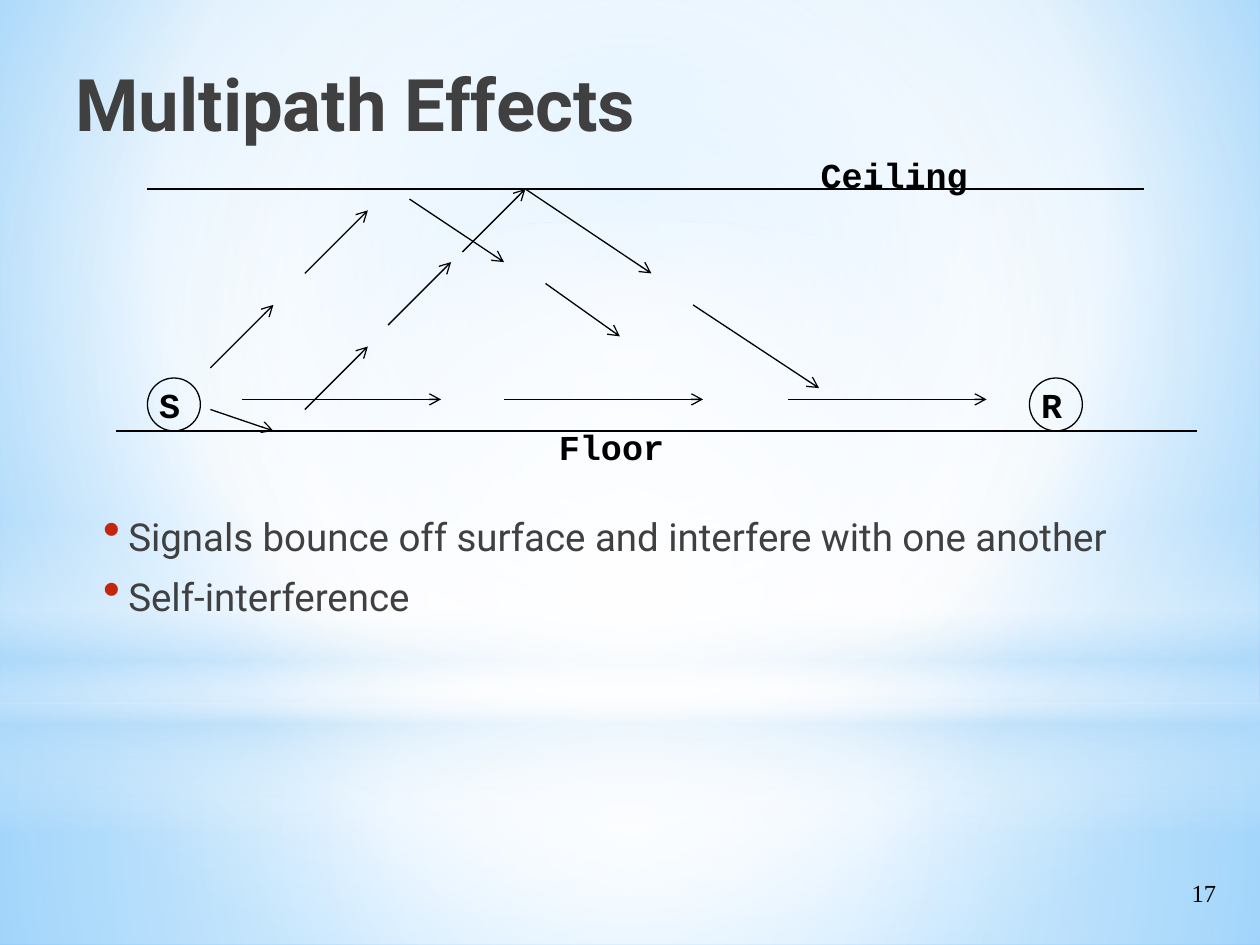
from lxml.etree import SubElement
from pptx import Presentation
from pptx.dml.color import RGBColor
from pptx.enum.shapes import MSO_CONNECTOR, MSO_SHAPE
from pptx.enum.text import MSO_ANCHOR, PP_ALIGN
from pptx.oxml import parse_xml
from pptx.oxml.ns import nsdecls, qn
from pptx.util import Inches, Pt

BLACK = RGBColor(0x00, 0x00, 0x00)
GREY = RGBColor(0x40, 0x40, 0x40)
RED = RGBColor(0xC3, 0x26, 0x0C)
WHITE = RGBColor(0xFF, 0xFF, 0xFF)
PALE = RGBColor(0xB4, 0xDC, 0xFA)
SKY = RGBColor(0x9E, 0xD5, 0xFF)
BLUE = RGBColor(0x5B, 0xB9, 0xFF)

CENTRE = (50, 50, 50, 50)
CEILING_Y, FLOOR_Y, DIRECT_Y = 1.5, 3.42, 3.17

# Box, shape, (position, colour, opacity) stops, focus (None for a vertical blend)
GLOWS = [
    ((0, 5.58, 10, 1.92), MSO_SHAPE.RECTANGLE,
     [(0, WHITE, 91), (37, WHITE, 76), (100, PALE, 79)], CENTRE),
    ((0, 0, 10, 5.58), MSO_SHAPE.RECTANGLE,
     [(0, WHITE, 89), (48, WHITE, 62), (100, PALE, 79)], CENTRE),
    ((0, 4.12, 10, 2.5), MSO_SHAPE.RECTANGLE,
     [(0, WHITE, 0), (29, WHITE, 30), (45, PALE, 40),
      (55, WHITE, 26), (65, PALE, 60), (100, WHITE, 0)], None),
    ((0, 1.75, 10, 5.58), MSO_SHAPE.OVAL,
     [(0, WHITE, 100), (56, WHITE, 0)], CENTRE),
]

# Arrows of each signal path, as (x1, y1, x2, y2)
DIRECT = [(x, DIRECT_Y, x + 1.58, DIRECT_Y) for x in (1.92, 4, 6.25)]
OFF_CEILING = [(1.67, 2.92, 2.17, 2.42), (2.42, 2.17, 2.92, 1.67),
               (3.25, 1.58, 4, 2.08), (4.33, 2.25, 4.92, 2.67)]
OFF_FLOOR = [(1.67, 3.25, 2.17, FLOOR_Y), (2.42, 3.25, 2.92, 2.75),
             (3.08, 2.58, 3.58, 2.08), (3.67, 2, 4.17, CEILING_Y),
             (4.17, CEILING_Y, 5.17, 2.17), (5.5, 2.42, 6.5, 3.08)]


def inches(values):
    return [Inches(value) for value in values]


def set_gradient(fill, owner, stops, focus):
    """Give the fill of owner a blend towards focus, or downwards."""
    fill.gradient()
    stop_xml = "".join(
        f'<a:gs pos="{position * 1000}"><a:srgbClr val="{colour}">'
        f'<a:alpha val="{opacity * 1000}"/></a:srgbClr></a:gs>'
        for position, colour, opacity in stops)
    if focus:
        sides = " ".join(f'{side}="{value * 1000}"' for side, value in zip("ltrb", focus))
        direction = f'<a:path path="circle"><a:fillToRect {sides}/></a:path>'
    else:
        direction = '<a:lin ang="5400000" scaled="0"/>'
    old = owner.find(".//" + qn("a:gradFill"))
    old.getparent().replace(old, parse_xml(
        f'<a:gradFill {nsdecls("a")} rotWithShape="1"><a:gsLst>{stop_xml}</a:gsLst>'
        f'{direction}</a:gradFill>'))


def style_text(para, font, size, colour, bold=False):
    for span in para.runs:
        span.font.name, span.font.size, span.font.bold = font, Pt(size), bold
        span.font.color.rgb = colour


def add_text(page, box, text, font, size, colour=BLACK, bold=False,
             align=PP_ALIGN.LEFT, wrap=True):
    frame = page.shapes.add_textbox(*inches(box)).text_frame
    frame.word_wrap = wrap
    frame.text = text
    for para in frame.paragraphs:
        para.alignment = align
        style_text(para, font, size, colour, bold)
    return frame


def add_line(page, ends, arrow=False):
    line = page.shapes.add_connector(MSO_CONNECTOR.STRAIGHT, *inches(ends))
    line.line.color.rgb = BLACK
    line.line.width = Pt(0.75)
    if arrow:
        SubElement(line.line._get_or_add_ln(), qn("a:tailEnd"), type="arrow")
    SubElement(line._element.spPr, qn("a:effectLst"))


def add_backdrop(page):
    set_gradient(page.background.fill, page.element,
                 [(0, SKY, 100), (60, WHITE, 100), (100, BLUE, 100)], (20, 10, 20, 60))
    for box, kind, stops, focus in GLOWS:
        glow = page.shapes.add_shape(kind, *inches(box))
        glow.shadow.inherit = False
        glow.line.fill.background()
        set_gradient(glow.fill, glow._element.spPr, stops, focus)


def add_bullets(page, box, lines):
    frame = add_text(page, box, "\n".join(lines), "Roboto", 22, GREY)
    for para in frame.paragraphs:
        para.space_before, para.space_after = Pt(5), Pt(3)
        properties = para._p.get_or_add_pPr()
        properties.set("marL", str(Inches(0.25)))
        properties.set("indent", str(Inches(-0.2)))
        colour = SubElement(properties, qn("a:buClr"))
        SubElement(colour, qn("a:srgbClr"), val=str(RED))
        SubElement(properties, qn("a:buSzPct"), val="130000")
        SubElement(properties, qn("a:buChar"), char="•")


def add_station(page, box, letter):
    station = page.shapes.add_shape(MSO_SHAPE.OVAL, *inches(box))
    station.shadow.inherit = False
    station.fill.background()
    station.line.color.rgb = BLACK
    station.line.width = Pt(0.75)
    frame = station.text_frame
    frame.word_wrap = False
    frame.vertical_anchor = MSO_ANCHOR.MIDDLE
    frame.text = letter
    frame.paragraphs[0].alignment = PP_ALIGN.RIGHT
    style_text(frame.paragraphs[0], "Courier New", 20, BLACK, True)


def add_diagram(page):
    # Sender and receiver stand on the floor
    for left, letter in ((1.17, "S"), (8.17, "R")):
        add_station(page, (left, FLOOR_Y - 0.42, 0.42, 0.42), letter)
    # Reflecting surfaces
    add_line(page, (0.92, FLOOR_Y, 9.5, FLOOR_Y))
    add_line(page, (1.17, CEILING_Y, 9.08, CEILING_Y))
    # Signal paths
    for ends in DIRECT + OFF_CEILING + OFF_FLOOR:
        add_line(page, ends, arrow=True)
    # Surface names
    for box, name in (((6.4, 1.17, 1.38, 0.44), "Ceiling"),
                      ((4.33, 3.33, 1.04, 0.44), "Floor")):
        add_text(page, box, name, "Courier New", 20, bold=True,
                 align=PP_ALIGN.RIGHT, wrap=False)


def main():
    deck = Presentation()
    deck.slide_width, deck.slide_height = Inches(10), Inches(7.5)
    page = deck.slides.add_slide(deck.slide_layouts[6])
    add_backdrop(page)
    add_text(page, (0.5, 0.42, 8.32, 0.75), "Multipath Effects", "Roboto", 41.4, GREY, True)
    add_bullets(page, (0.67, 4.02, 8.33, 2.61),
                ["Signals bounce off surface and interfere with one another",
                 "Self-interference"])
    add_text(page, (8.75, 6.92, 1, 0.42), "17", "Times New Roman", 14, align=PP_ALIGN.RIGHT)
    add_diagram(page)
    deck.save("out.pptx")


if __name__ == "__main__":
    main()
